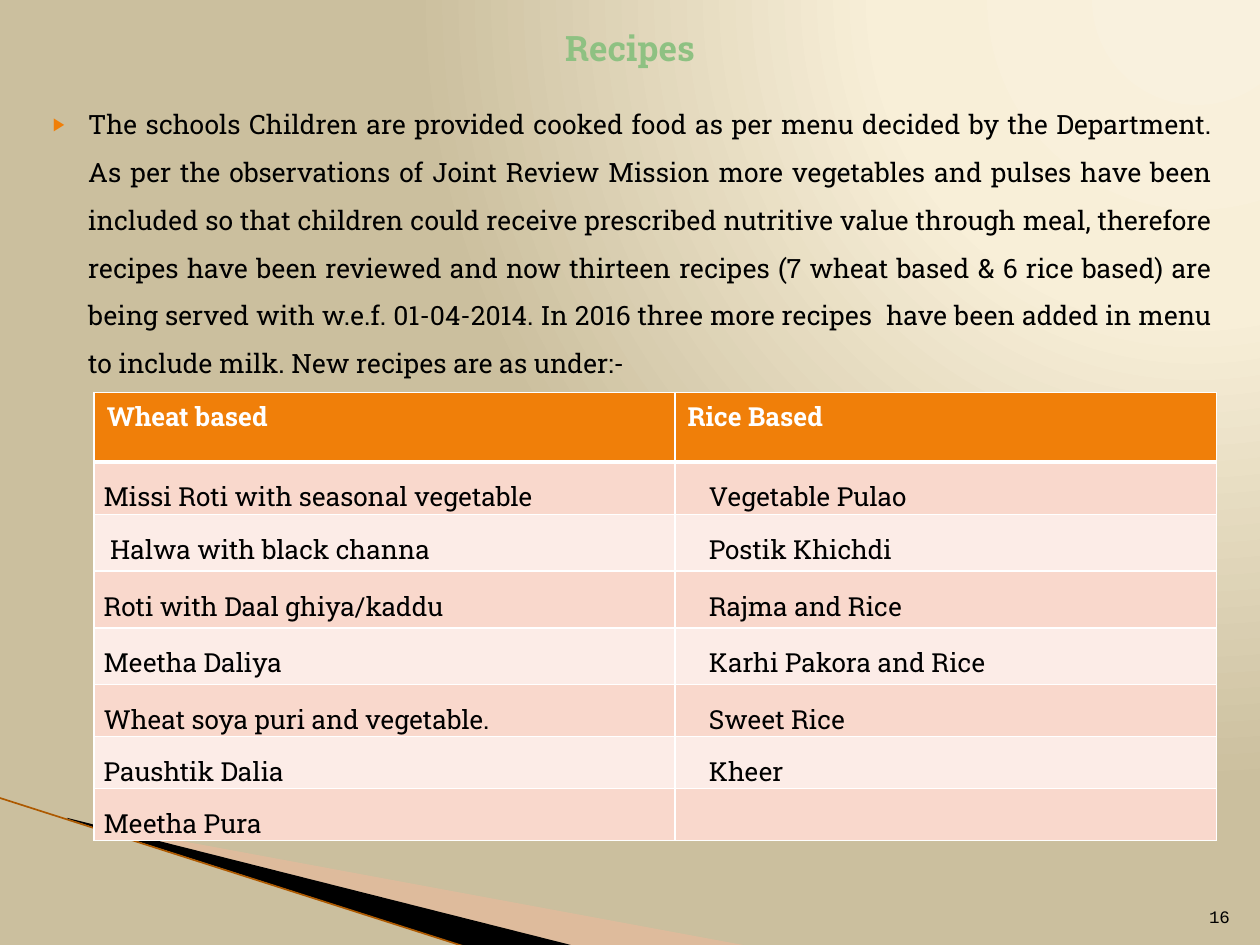
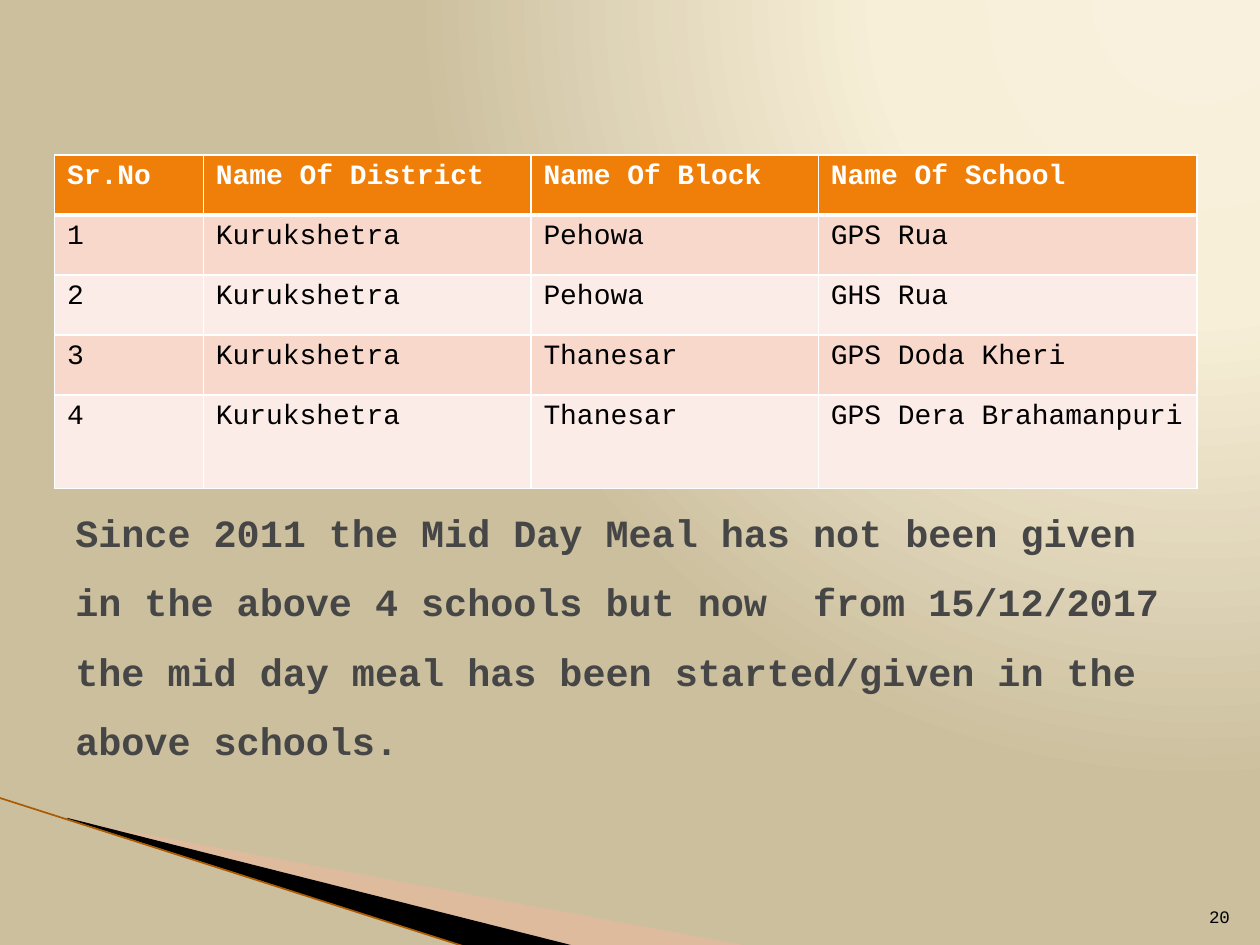
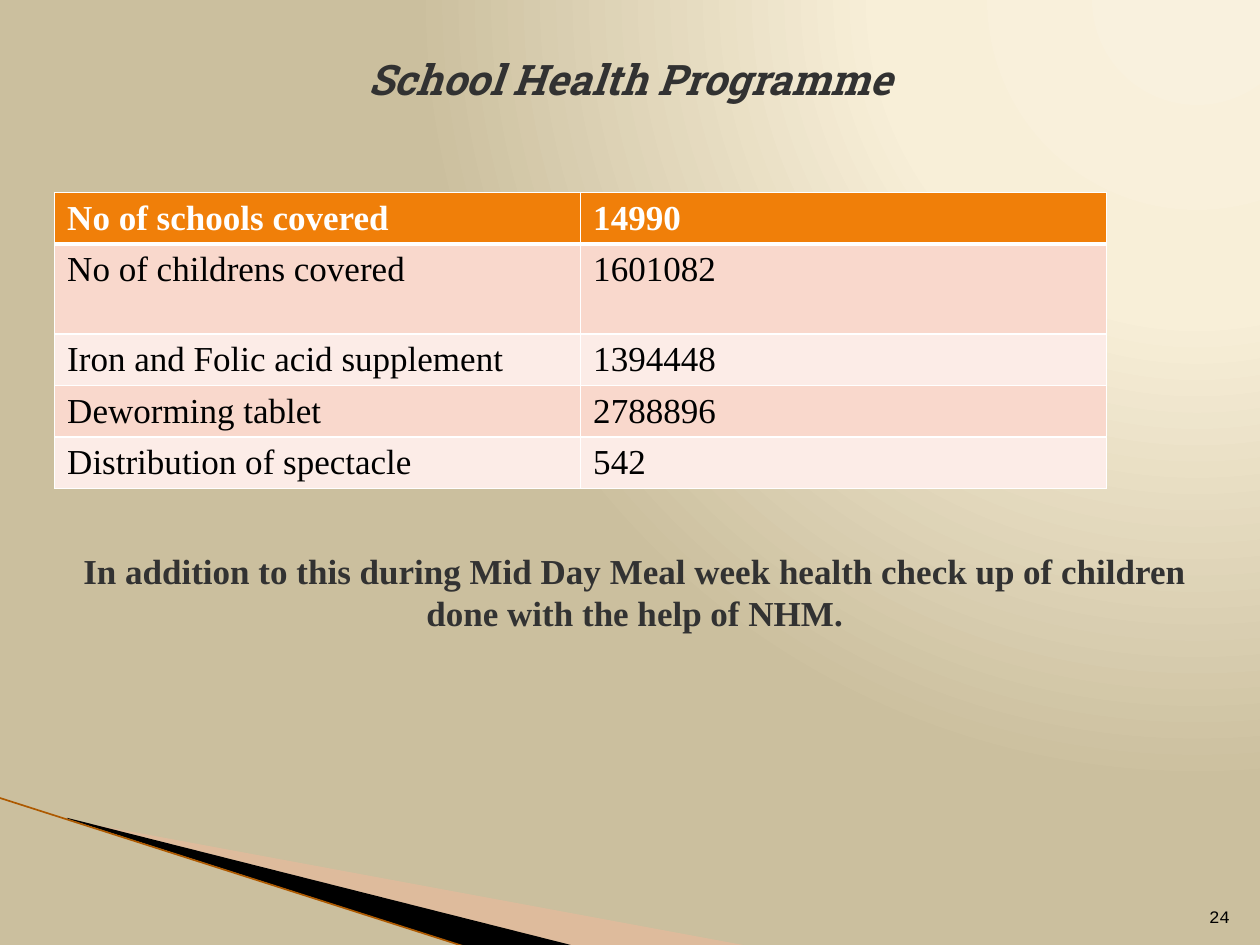
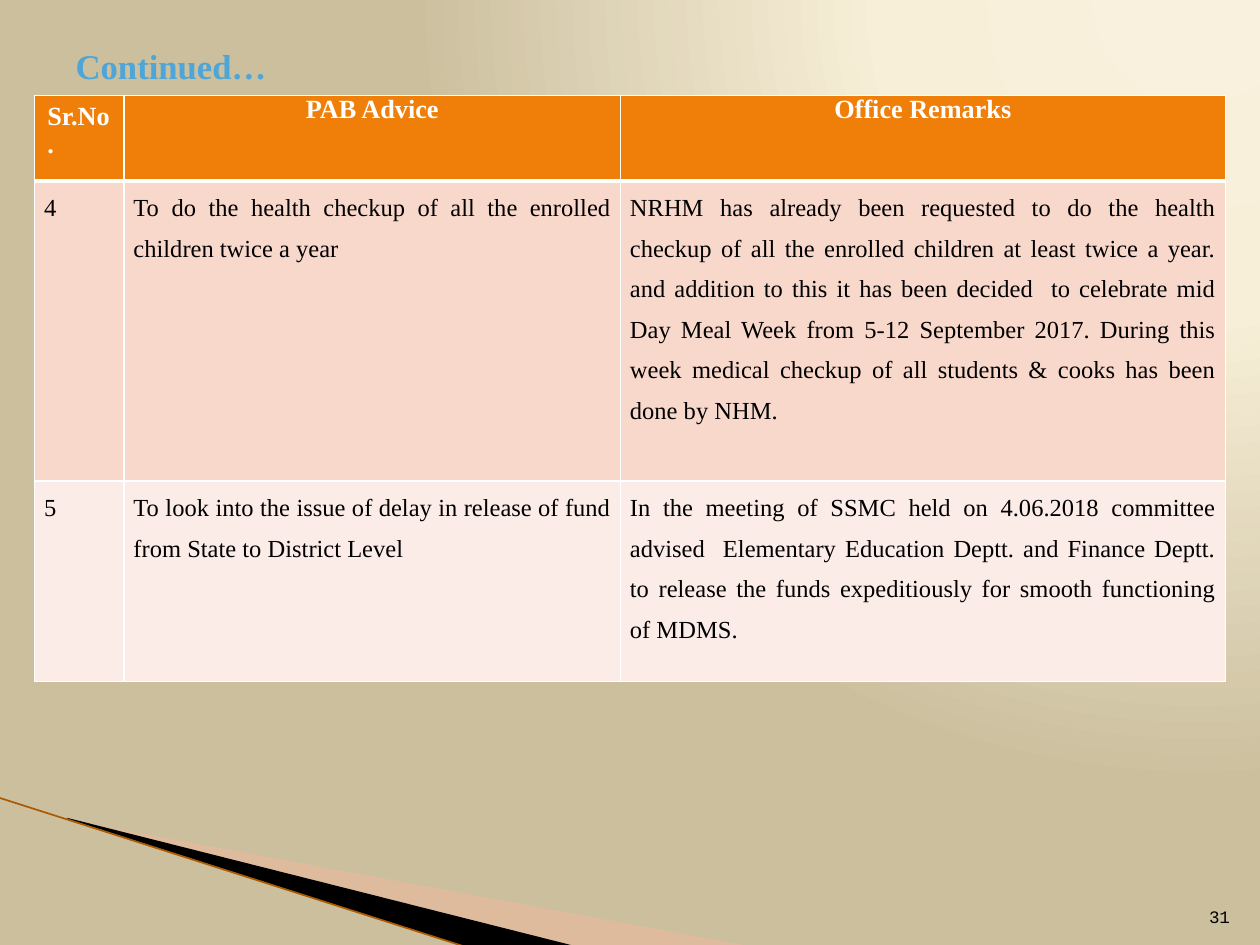
from pptx import Presentation
from pptx.dml.color import RGBColor as Rgb
from pptx.enum.shapes import MSO_CONNECTOR as Wire
from pptx.enum.text import MSO_ANCHOR as Anchor, MSO_AUTO_SIZE as Fit, PP_ALIGN as Align
from pptx.oxml import parse_xml
from pptx.oxml.ns import nsdecls, qn
from pptx.oxml.xmlchemy import OxmlElement as Node
from pptx.util import Pt

HUE = {
    "ink": "000000", "white": "FFFFFF", "orange": "F07F09", "rose": "F9D8CC",
    "blush": "FCECE7", "peach": "FCB79B", "rust": "AD5900", "green": "8EC182",
    "blue": "4EA5D8", "slate": "464646", "coal": "323232",
    "glow": "F9F1DE", "cream": "F8EFD8", "sand": "CBBF9E",
}
SLAB, MONO, SERIF = "Roboto Slab", "Courier New", "Times New Roman"
SLIM = {"margin_left": Pt(5.4), "margin_right": Pt(5.4), "margin_top": 0, "margin_bottom": 0}
EVEN = {"alignment": Align.JUSTIFY, "line_spacing": 1.5}


def tone(name):
    return Rgb.from_string(HUE[name])


def apply(item, looks):
    for name, value in looks.items():
        setattr(item, name, value)


def place(shape, box):
    apply(shape, dict(zip(("left", "top", "width", "height"), map(Pt, box))))


def face(name, size, **more):
    return {"name": name, "size": Pt(size), **more}


def write(frame, text, font, hue, para):
    frame.text = text
    first = frame.paragraphs[0]
    apply(first, para)
    for run in first.runs:
        apply(run.font, font)
        run.font.color.rgb = tone(hue)
    return first


def indent(para, left, hang=0):
    props = para._p.get_or_add_pPr()
    props.set("marL", str(Pt(left)))
    props.set("indent", str(Pt(hang)))
    return props


def paint(master):
    stops = "".join(
        f'<a:gs pos="{pos}"><a:srgbClr val="{HUE[name]}"/></a:gs>'
        for pos, name in ((0, "glow"), (40000, "cream"), (100000, "sand"))
    )
    base = master.element.find(qn("p:cSld"))
    for old in base.findall(qn("p:bg")):
        base.remove(old)
    base.insert(0, parse_xml(
        f'<p:bg {nsdecls("p", "a")}><p:bgPr><a:gradFill rotWithShape="1">'
        f'<a:gsLst>{stops}</a:gsLst><a:path path="circle">'
        '<a:fillToRect l="95000" t="-106000" r="5000" b="206000"/></a:path>'
        "</a:gradFill><a:effectLst/></p:bgPr></p:bg>"
    ))


def frame(shape, box):
    left, top = shape.left, shape.top
    place(shape, box)
    for spot in shape.element.iter(qn("a:pt")):
        spot.set("x", str(int(spot.get("x")) + left - shape.left))
        spot.set("y", str(int(spot.get("y")) + top - shape.top))
    trail = shape.element.find(".//" + qn("a:path"))
    trail.set("w", str(shape.width))
    trail.set("h", str(shape.height))


def wedge(shapes, box, spots, hue):
    spots = [(Pt(x), Pt(y)) for x, y in spots]
    pen = shapes.build_freeform(*spots[0], scale=1.0)
    pen.add_line_segments(spots[1:], close=True)
    shape = pen.convert_to_shape()
    frame(shape, box)
    shape.shadow.inherit = False
    shape.fill.solid()
    shape.fill.fore_color.rgb = tone(hue)
    shape.line.fill.background()
    return shape


def corner(slide, master):
    shapes = slide.shapes
    pale = wedge(shapes, (56.2, 393.8, 299.5, 113.8),
                 [(39.6, 468.7), (428.4, 540.7), (328.3, 540.7), (39.6, 468)], "peach")
    alpha = Node("a:alpha")
    alpha.set("val", "40000")
    pale.element.spPr.find(".//" + qn("a:srgbClr")).append(alpha)
    dark = wedge(shapes, (-4.3, 455.8, 299.5, 66.2),
                 [(38.2, 467.3), (329, 540.7), (267.8, 541.4), (38.9, 468)], "ink")
    edge = shapes.add_connector(Wire.STRAIGHT, Pt(-0.7), Pt(455.8), Pt(267.1), Pt(541.4))
    edge.line.width = Pt(0.95)
    edge.line.color.rgb = tone("rust")
    edge.element.spPr.append(Node("a:effectLst"))
    for num, part in enumerate((pale, dark, edge), 20):
        part.element.find(".//" + qn("p:cNvPr")).set("id", str(num))
        master.shapes.element.append(part.element)


def title(slide, box, text, font, hue, align):
    shape = slide.shapes.title
    place(shape, box)
    apply(shape.text_frame, {"vertical_anchor": Anchor.MIDDLE, "auto_size": Fit.NONE})
    write(shape.text_frame, text, {**font, "bold": True}, hue, {"alignment": align})


def body(slide, box, text, font):
    shape = slide.placeholders[1]
    place(shape, box)
    shape.text_frame.auto_size = Fit.NONE
    para = write(shape.text_frame, text, font, "ink", {**EVEN, "space_before": Pt(0)})
    props = indent(para, 28.8, -20.2)
    for mark in (
        f'<a:buClr {nsdecls("a")}><a:srgbClr val="{HUE["orange"]}"/></a:buClr>',
        f'<a:buSzPct {nsdecls("a")} val="68000"/>',
        f'<a:buChar {nsdecls("a")} char="▶"/>',
    ):
        props.append(parse_xml(mark))


def note(slide, box, text, font, hue, para, anchor):
    shape = slide.shapes.add_textbox(*map(Pt, box))
    apply(shape.text_frame, {"word_wrap": True, "vertical_anchor": anchor})
    write(shape.text_frame, text, font, hue, para)


def number(slide, text):
    note(slide, (681.1, 504.7, 28.8, 28.8), text, face(MONO, 10), "ink",
         {"alignment": Align.RIGHT}, Anchor.BOTTOM)


def border(cell, row):
    thick = {"L": 1, "R": 1, "T": 3 if row == 1 else 1, "B": 1 if row else 3}
    props = cell._tc.get_or_add_tcPr()
    for side, width in thick.items():
        props.append(parse_xml(
            f'<a:ln{side} {nsdecls("a")} w="{Pt(width)}"><a:solidFill>'
            f'<a:srgbClr val="{HUE["white"]}"/></a:solidFill></a:ln{side}>'
        ))


def grid(slide, spot, cols, rows, data, font, heads=None, kinds=None, size=None):
    shape = slide.shapes.add_table(len(rows), len(cols), *map(Pt, (*spot, sum(cols), sum(rows))))
    table = shape.table
    for col, width in zip(table.columns, cols):
        col.width = Pt(width)
    for row, height in zip(table.rows, rows):
        row.height = Pt(height)
    plain = [{}] * len(cols)
    for r, line in enumerate(data):
        hue = "orange" if r == 0 else "rose" if r % 2 else "blush"
        looks = {**font, "bold": r == 0}
        if r and size:
            looks["size"] = Pt(size)
        forms = (kinds if r else heads) or plain
        for c, (text, form) in enumerate(zip(line, forms)):
            cell = table.cell(r, c)
            border(cell, r)
            cell.fill.solid()
            cell.fill.fore_color.rgb = tone(hue)
            apply(cell, form.get("cell", {}))
            para = write(cell.text_frame, text, looks, "ink" if r else "white",
                         form.get("para", {}))
            if "left" in form:
                indent(para, form["left"])


def recipes(slide):
    body(slide, (14.4, 49, 686.2, 170),
         "The schools Children are provided cooked food as per menu decided by the Department. "
         "As per the observations of Joint Review Mission more vegetables and pulses have been "
         "included so that children could receive prescribed nutritive value through meal, "
         "therefore recipes have been reviewed and now thirteen recipes (7 wheat based & 6 rice "
         "based) are being served with w.e.f. 01-04-2014. In 2016 three more recipes  have been "
         "added in menu to include milk. New recipes are as under:-", face(SLAB, 15.2))
    title(slide, (36, 0, 648, 54), "Recipes", face(SLAB, 20), "green", Align.CENTER)
    space = {"line_spacing": 1.5, "space_after": Pt(6)}
    kinds = [
        {"cell": SLIM, "para": space},
        {"cell": SLIM, "para": {**space, "alignment": Align.JUSTIFY}, "left": 14},
    ]
    grid(slide, (53.8, 224.4), (331.9, 309.6), (39.6, 30, *[32.4] * 3, *[29.7] * 3), [
        ("Wheat based", "Rice Based"),
        ("Missi Roti with seasonal vegetable", "Vegetable Pulao"),
        (" Halwa with black channa", "Postik Khichdi"),
        ("Roti with Daal ghiya/kaddu", "Rajma and Rice"),
        ("Meetha Daliya", "Karhi Pakora and Rice"),
        ("Wheat soya puri and vegetable.", "Sweet Rice"),
        ("Paushtik Dalia", "Kheer"),
        ("Meetha Pura", ""),
    ], face(SLAB, 15), kinds=kinds)


def schools(slide):
    places = [("Pehowa", "GPS Rua"), ("Pehowa", "GHS Rua"),
              ("Thanesar", "GPS Doda Kheri"), ("Thanesar", "GPS Dera Brahamanpuri")]
    data = [("Sr.No", "Name Of District", "Name Of Block", "Name Of School")]
    data += [(str(n), "Kurukshetra", *pair) for n, pair in enumerate(places, 1)]
    grid(slide, (31.2, 88.6), (85, 187.2, 164.2, 216.4), (*[34.3] * 4, 53.3), data, face(MONO, 16))
    note(slide, (36, 274.2, 648, 166),
         "Since 2011 the Mid Day Meal has not been given in the above 4 schools but now  from "
         "15/12/2017 the mid day meal has been started/given in the above schools.",
         face(MONO, 22, bold=True), "slate", {"line_spacing": 1.5}, Anchor.TOP)


def health(slide):
    title(slide, (36, 22.3, 648, 45.4), "School Health Programme",
          face(SLAB, 24, italic=True), "coal", Align.CENTER)
    grid(slide, (31.2, 110), (300.6, 300.6), (29.4, 51.4, *[29.4] * 3), [
        ("No of schools covered", "14990"),
        ("No of childrens covered", "1601082"),
        ("Iron and Folic acid supplement", "1394448"),
        ("Deworming tablet", "2788896"),
        ("Distribution of spectacle", "542"),
    ], face(SERIF, 20))
    note(slide, (25.5, 298.5, 674.6, 79.2),
         "In addition to this during Mid Day Meal week health check up of children done with "
         "the help of NHM.", face(SERIF, 20, bold=True), "coal",
         {"alignment": Align.CENTER}, Anchor.MIDDLE)


def advice(slide):
    mid = {"cell": SLIM, "para": {"alignment": Align.CENTER}}
    grid(slide, (19.8, 54.5), (51.1, 283.7, 345.6), (49, 171.4, 114.5), [
        ("Sr.No.", "PAB Advice", "Office Remarks"),
        ("4", "To do the health checkup of all the enrolled children twice a year",
         "NRHM has already been requested to do the health checkup of all the enrolled children "
         "at least twice a year. and addition to this it has been decided  to celebrate mid Day "
         "Meal Week from 5-12 September 2017. During this week medical checkup of all students "
         "& cooks has been done by NHM."),
        ("5", "To look into the issue of delay in release of fund from State to District Level",
         "In the meeting of SSMC held on 4.06.2018 committee advised  Elementary Education "
         "Deptt. and Finance Deptt. to release the funds expeditiously for smooth functioning "
         "of MDMS."),
    ], face(SERIF, 15), [{}, mid, mid], [{"cell": SLIM, "para": EVEN}] * 3, 14)
    title(slide, (36, 26.3, 648, 22.3), "Continued…", face(SERIF, 19.8), "blue", Align.LEFT)


def main():
    deck = Presentation()
    apply(deck, {"slide_width": Pt(720), "slide_height": Pt(540)})
    master = deck.slide_master
    paint(master)
    pages = ((recipes, 1, "16"), (schools, 6, "20"), (health, 5, "24"), (advice, 5, "31"))
    for draw, kind, num in pages:
        slide = deck.slides.add_slide(deck.slide_layouts[kind])
        if draw is recipes:
            corner(slide, master)
        draw(slide)
        number(slide, num)
    deck.save("out.pptx")


if __name__ == "__main__":
    main()
